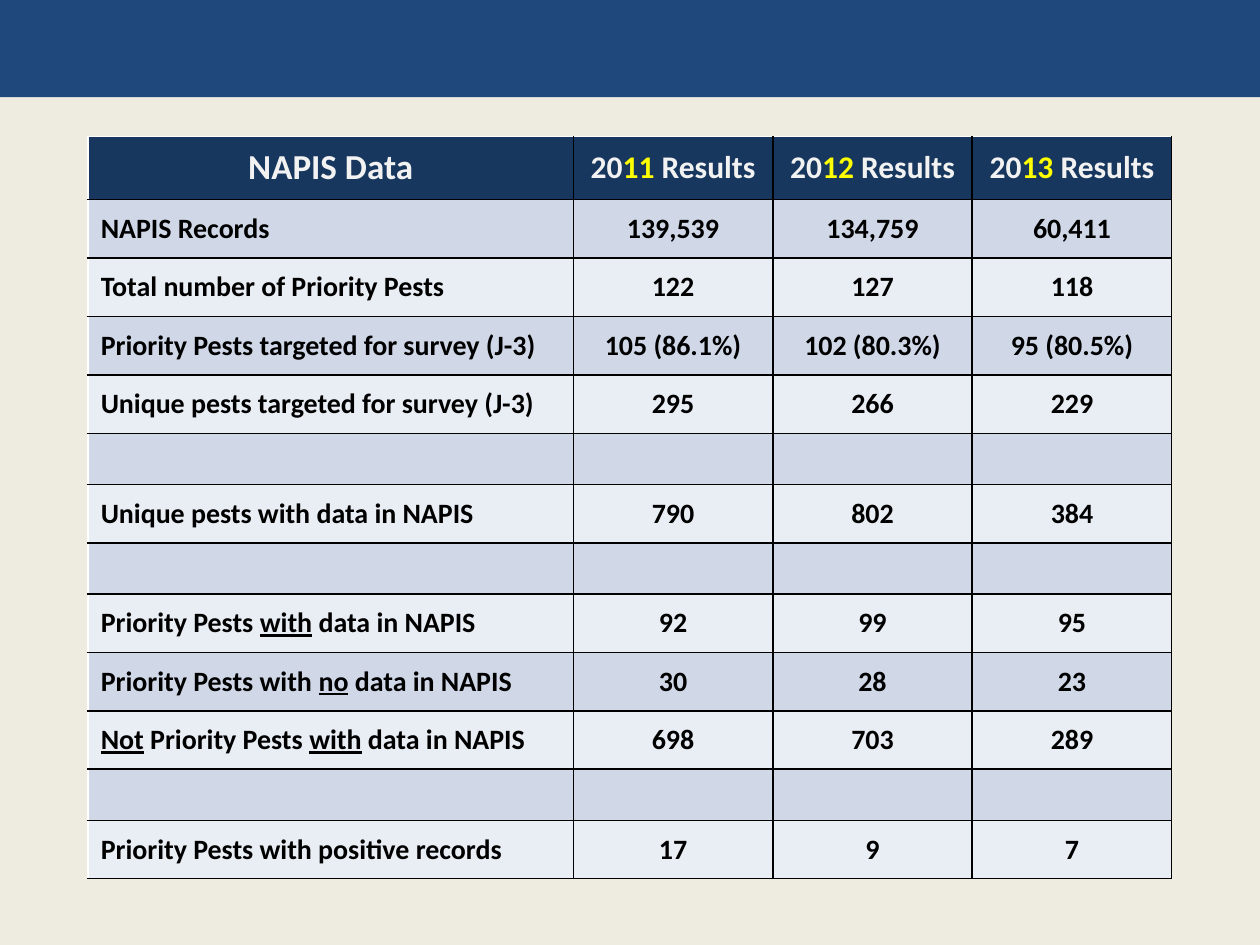
from lxml.etree import SubElement
from pptx import Presentation
from pptx.dml.color import RGBColor
from pptx.enum.shapes import MSO_SHAPE as SHAPE
from pptx.enum.text import MSO_ANCHOR as ANCHOR, PP_ALIGN as ALIGN
from pptx.oxml.ns import qn
from pptx.util import Pt

CREAM = RGBColor(0xEE, 0xEC, 0xE1)
BLUE = RGBColor(0x1F, 0x49, 0x7D)
NAVY = RGBColor(0x17, 0x37, 0x5E)
BANDS = (RGBColor(0xE9, 0xED, 0xF4), RGBColor(0xD0, 0xD8, 0xE8))
BLACK = RGBColor(0, 0, 0)
WHITE = RGBColor(0xFF, 0xFF, 0xFF)
OFF_WHITE = RGBColor(0xF2, 0xF2, 0xF2)
YELLOW = RGBColor(0xFF, 0xFF, 0)

HEADER = ("NAPIS Data", "20_11 _Results", "20_12 _Results", "20_13 _Results")
BLANK = ("", "", "", "")
ROWS = (
    ("NAPIS Records", "139,539", "134,759", "60,411"),
    ("Total number of Priority Pests", "122", "127", "118"),
    ("Priority Pests targeted for survey (J-3)",
     "105 (86.1%)", "102 (80.3%)", "95 (80.5%)"),
    ("Unique pests targeted for survey (J-3)", "295", "266", "229"),
    BLANK,
    ("Unique pests with data in NAPIS", "790", "802", "384"),
    BLANK,
    ("Priority Pests _with_ data in NAPIS", "92", "99", "95"),
    ("Priority Pests with _no_ data in NAPIS", "30", "28", "23"),
    ("_Not_ Priority Pests _with_ data in NAPIS", "698", "703", "289"),
    BLANK,
    ("Priority Pests with positive records", "17", "9", "7"),
)
COL_WIDTHS = (277.2, 114, 114, 114)
HEADER_HEIGHT, ROW_HEIGHT, BLANK_HEIGHT = 36, 33.4, 29


class Deck:
    font = "Calibri"

    def __init__(self, width, height):
        self.prs = Presentation()
        self.prs.slide_width, self.prs.slide_height = Pt(width), Pt(height)
        self.s = self.prs.slides.add_slide(self.prs.slide_layouts[6])

    def background(self, color):
        fill = self.s.background.fill
        fill.solid()
        fill.fore_color.rgb = color

    def bar(self, x, y, w, h, color):
        sp = self.s.shapes.add_shape(SHAPE.RECTANGLE, Pt(x), Pt(y), Pt(w), Pt(h))
        sp.shadow.inherit = False
        sp.fill.solid()
        sp.fill.fore_color.rgb = color
        sp.line.fill.background()

    def borders(self, cell, left, top):
        tcPr = cell._tc.get_or_add_tcPr()
        sides = (("L", left), ("R", BLACK), ("T", top), ("B", BLACK))
        for side, color in sides:
            ln = SubElement(tcPr, qn(f"a:ln{side}"), w=str(Pt(1)))
            fill = SubElement(ln, qn("a:solidFill"))
            SubElement(fill, qn("a:srgbClr"), val=str(color))

    def text(self, cell, marked, size, align, header):
        cell.vertical_anchor = ANCHOR.MIDDLE
        p = cell.text_frame.paragraphs[0]
        p.alignment = align
        for i, part in enumerate(marked.split("_")):
            if not part:
                continue
            accent = i % 2 == 1
            r = p.add_run()
            r.text = part
            r.font.name, r.font.size, r.font.bold = self.font, Pt(size), True
            if header:
                r.font.color.rgb = YELLOW if accent else OFF_WHITE
            else:
                r.font.color.rgb = BLACK
                r.font.underline = accent

    def table(self, x, y, widths, header, rows):
        heights = [HEADER_HEIGHT]
        heights += [ROW_HEIGHT if any(row) else BLANK_HEIGHT for row in rows]
        frame = self.s.shapes.add_table(
            len(heights), len(widths), Pt(x), Pt(y),
            Pt(sum(widths)), Pt(sum(heights)))
        table = frame.table
        for column, width in zip(table.columns, widths):
            column.width = Pt(width)
        for i, values in enumerate((header, *rows)):
            table.rows[i].height = Pt(heights[i])
            top = i == 0
            for j, value in enumerate(values):
                cell = table.cell(i, j)
                first = j == 0
                self.borders(cell, WHITE if first else BLACK,
                             WHITE if top else BLACK)
                cell.fill.solid()
                cell.fill.fore_color.rgb = NAVY if top else BANDS[i % 2]
                size = (20 if first else 18) if top else 16
                align = ALIGN.LEFT if first and not top else ALIGN.CENTER
                if value:
                    self.text(cell, value, size, align, top)


def main():
    deck = Deck(720, 540)
    deck.background(CREAM)
    deck.bar(0, 0, 720, 55.5, BLUE)
    deck.table(50.4, 78, COL_WIDTHS, HEADER, ROWS)
    deck.prs.save("out.pptx")


if __name__ == "__main__":
    main()
